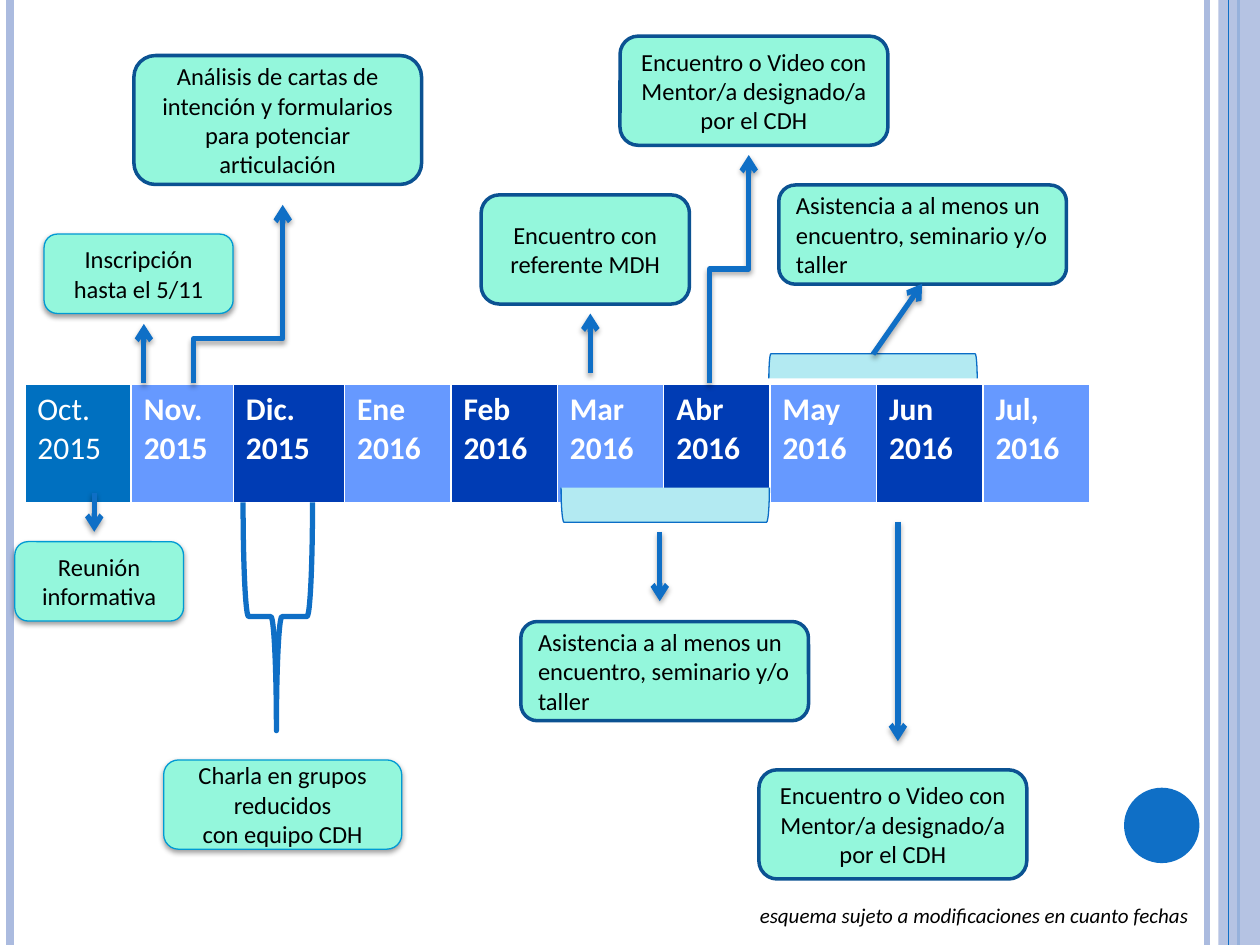
from lxml.etree import SubElement
from pptx import Presentation
from pptx.dml.color import RGBColor
from pptx.enum.shapes import MSO_CONNECTOR, MSO_SHAPE
from pptx.enum.text import MSO_ANCHOR, PP_ALIGN
from pptx.oxml.ns import qn
from pptx.util import Cm, Pt

WHITE = RGBColor(0xFF, 0xFF, 0xFF)
BLACK = RGBColor(0, 0, 0)
BLUE = RGBColor(0x0F, 0x6F, 0xC6)
PALE = RGBColor(0xAB, 0xBB, 0xDF)
MINT = RGBColor(0x94, 0xF7, 0xDC)
NAVY = RGBColor(0x0B, 0x52, 0x92)
SKY = RGBColor(0x00, 0x9A, 0xD4)
AQUA = RGBColor(0xB3, 0xEA, 0xF2)
EDGE = RGBColor(0x0A, 0x6D, 0xC6)
FIRST = RGBColor(0x00, 0x70, 0xC0)
LIGHT = RGBColor(0x66, 0x99, 0xFF)
DARK = RGBColor(0x00, 0x3C, 0xB4)

LEFT, MID, RIGHT = PP_ALIGN.LEFT, PP_ALIGN.CENTER, PP_ALIGN.RIGHT
MONTH = {"name": "Calibri", "size": Pt(18), "bold": True}
LABEL = {"name": "Calibri", "size": Pt(14)}
NOTE = {"name": "Calibri", "size": Pt(12), "italic": True}


def write(frame, text, form, color, align):
    frame.text = text
    frame.word_wrap = True
    for para in frame.paragraphs:
        para.alignment = align
        for run in para.runs:
            for key, value in form.items():
                setattr(run.font, key, value)
            run.font.color.rgb = color


def shade(props, alpha, dist):
    effect = props.find(qn("a:effectLst"))
    if effect is None:
        effect = SubElement(props, qn("a:effectLst"))
    if alpha:
        drop = SubElement(effect, qn("a:outerShdw"), blurRad=str(Pt(3.1)),
                          dist=str(Pt(dist)), dir="5400000", rotWithShape="0")
        tint = SubElement(drop, qn("a:srgbClr"), val="000000")
        SubElement(tint, qn("a:alpha"), val=str(alpha * 1000))


deck = Presentation()
deck.slide_width, deck.slide_height = Cm(25.4), Cm(19.05)
slide = deck.slides.add_slide(deck.slide_layouts[6])
shapes = slide.shapes

for x, color, width in [(24.33, PALE, 3), (0.2, PALE, 4.5),
                        (24.97, BLUE, 1.5), (24.77, BLUE, 0.75)]:
    rule = shapes.add_connector(MSO_CONNECTOR.STRAIGHT, Cm(x), 0, Cm(x), Cm(19.05))
    rule.line.color.rgb = color
    rule.line.width = Pt(width)
    shade(rule._element.spPr, 0, 0)
    if x == 24.97:
        band = shapes.add_shape(MSO_SHAPE.RECTANGLE, Cm(24.56), 0, Cm(0.84), Cm(19.05))
        band.fill.solid()
        band.fill.fore_color.rgb = PALE
        tint = band._element.spPr.find(qn("a:solidFill"))[0]
        SubElement(tint, qn("a:alpha"), val="87000")
        band.line.fill.background()
        band.shadow.inherit = False

disc = shapes.add_shape(MSO_SHAPE.OVAL, Cm(22.66), Cm(15.88), Cm(1.52), Cm(1.52))
disc.fill.solid()
disc.fill.fore_color.rgb = BLUE
disc.line.fill.background()
disc.shadow.inherit = False

months = ["Oct.\n2015", "Nov. 2015", "Dic. 2015", "Ene\n2016", "Feb\n2016",
          "Mar 2016", "Abr 2016", "May\n2016", "Jun 2016", "Jul,\n2016"]
table = shapes.add_table(1, len(months), Cm(0.5), Cm(7.75), Cm(21.46), Cm(2.38)).table
for i, month in enumerate(months):
    table.columns[i].width = Cm({1: 2.06, 2: 2.24}.get(i, 2.145))
    cell = table.cell(0, i)
    cell.fill.solid()
    cell.fill.fore_color.rgb = (DARK if i % 2 == 0 else LIGHT) if i else FIRST
    write(cell.text_frame, month, MONTH | {"bold": i > 0}, WHITE, LEFT)

visit = "Asistencia a al menos un encuentro, seminario y/o taller"
meet = "Encuentro o Video con Mentor/a designado/a por el CDH"
boxes = [
    (0.3, 10.92, 3.4, 1.6, "Reunión informativa", MID, SKY),
    (0.89, 4.72, 3.81, 1.6, "Inscripción hasta el 5/11", MID, SKY),
    (3.3, 15.32, 4.8, 1.8, "Charla en grupos reducidos\ncon equipo CDH", MID, SKY),
    (9.7, 3.93, 4.2, 2.2, "Encuentro con referente MDH", MID, NAVY),
    (2.7, 1.12, 5.8, 2.6, "Análisis de cartas de intención y formularios "
     "para potenciar articulación", MID, NAVY),
    (10.5, 12.53, 5.8, 2, visit, LEFT, NAVY),
    (12.5, 0.73, 5.4, 2.2, meet, MID, NAVY),
    (15.7, 3.73, 5.8, 2, visit, LEFT, NAVY),
    (15.3, 15.52, 5.4, 2.2, meet, MID, NAVY),
]
for x, y, w, h, text, align, edge in boxes:
    box = shapes.add_shape(MSO_SHAPE.ROUNDED_RECTANGLE, Cm(x), Cm(y), Cm(w), Cm(h))
    box.fill.solid()
    box.fill.fore_color.rgb = MINT
    box.line.color.rgb = edge
    box.line.width = Pt(2 if edge == NAVY else 0.75)
    box.shadow.inherit = False
    if edge == SKY:
        shade(box._element.spPr, 38, 1.6)
    box.text_frame.vertical_anchor = MSO_ANCHOR.MIDDLE
    write(box.text_frame, text, LABEL, BLACK, align)

brace = shapes.add_shape(MSO_SHAPE.RIGHT_BRACE, Cm(3.3), Cm(11.73), Cm(4.6), Cm(1.4))
brace.rotation = 90
brace.adjustments[0], brace.adjustments[1] = 0.08, 0.52
brace.fill.background()
brace.line.color.rgb = BLUE
brace.line.width = Pt(3)
brace.shadow.inherit = False

for x, y, w, turn in [(13.06, 8.08, 0.7, 90), (17.35, 5.28, 0.5, 270)]:
    clip = shapes.add_shape(MSO_SHAPE.RIGHT_BRACKET, Cm(x), Cm(y), Cm(w), Cm(4.2))
    clip.rotation = turn
    clip.fill.solid()
    clip.fill.fore_color.rgb = AQUA
    clip.line.color.rgb = EDGE
    clip.line.width = Pt(0.75)
    clip.shadow.inherit = False

arrows = [
    (1.9, 9.93, 1.9, 10.72, None),
    (2.9, 7.72, 2.9, 6.53, None),
    (3, 5.03, 6.6, 6.83, 0.25),
    (11.9, 7.52, 11.9, 6.32, None),
    (13.3, 10.72, 13.3, 12.12, None),
    (12.4, 5.03, 17, 5.82, 0.5),
    (17.6, 7.14, 18.59, 5.72, None),
    (18.1, 10.52, 18.1, 14.94, None),
]
for x, y, right, low, bend in arrows:
    kind = MSO_CONNECTOR.ELBOW if bend else MSO_CONNECTOR.STRAIGHT
    arrow = shapes.add_connector(kind, Cm(x), Cm(y), Cm(right), Cm(low))
    arrow.line.color.rgb = BLUE
    arrow.line.width = Pt(3)
    props = arrow._element.spPr
    SubElement(props.find(qn("a:ln")), qn("a:tailEnd"), type="arrow")
    shade(props, 35, 1.8)
    if bend:
        props.find(qn("a:xfrm")).set("rot", "16200000")
        guides = props.find(qn("a:prstGeom")).find(qn("a:avLst"))
        SubElement(guides, qn("a:gd"), name="adj1", fmla=f"val {int(bend * 100000)}")

note = shapes.add_textbox(Cm(8.33), Cm(18.06), Cm(15.88), Cm(0.77))
write(note.text_frame, "esquema sujeto a modificaciones en cuanto fechas",
      NOTE, BLACK, RIGHT)

deck.save("out.pptx")
